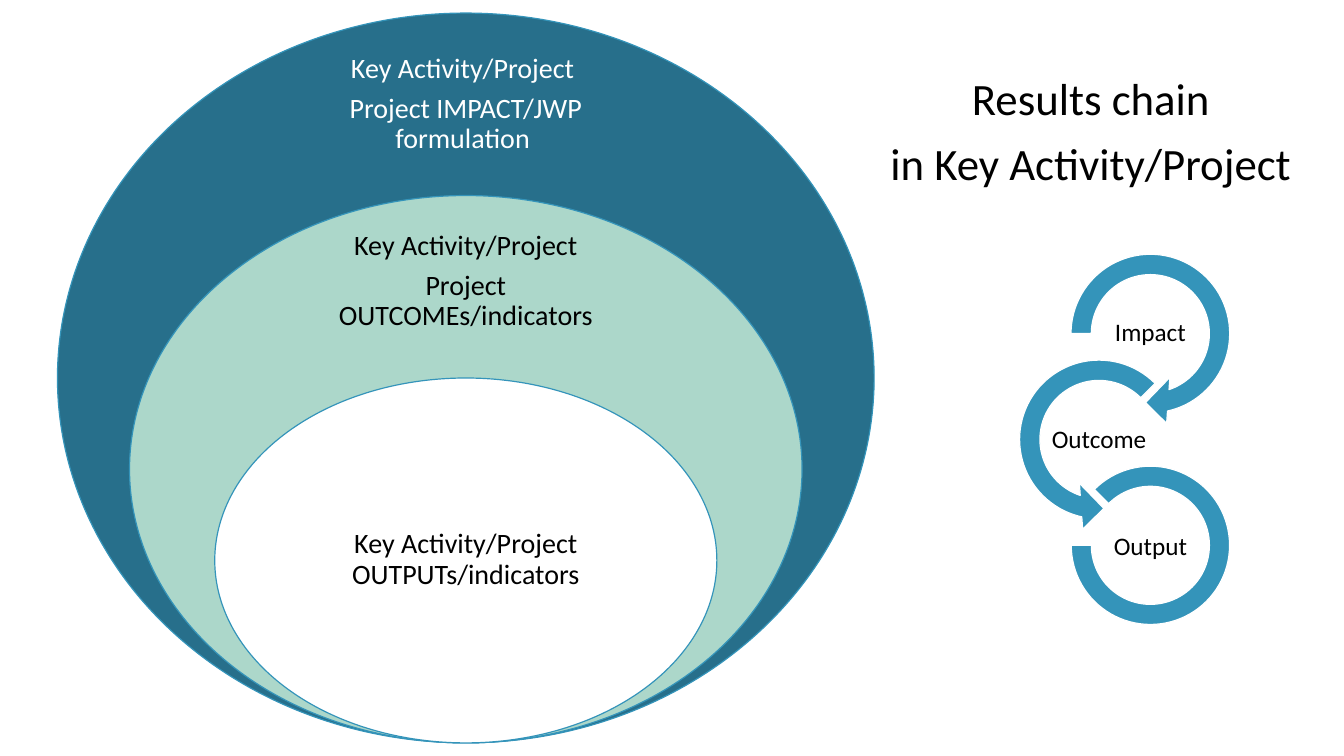
"""Build the results chain slide with nested ellipses and a chain of arrows."""
import dataclasses
import typing

import pptx
import pptx.dml.color
import pptx.enum.shapes
import pptx.enum.text
import pptx.shapes.autoshape
import pptx.shapes.shapetree
import pptx.util

SHAPE = pptx.enum.shapes.MSO_SHAPE
ANCHOR = pptx.enum.text.MSO_ANCHOR
ShapeTree = typing.Union[pptx.shapes.shapetree.SlideShapes, pptx.shapes.shapetree.GroupShapes]

COLUMNS, ROWS = 13.33, 7.5
CELL = pptx.util.Inches(1)


@dataclasses.dataclass(frozen=True)
class Theme:
    font: str = "Calibri"
    accent: str = "3494BA"
    deep: str = "276F8B"
    pale: str = "ACD7CA"
    white: str = "FFFFFF"
    black: str = "000000"
    title_size: float = 32
    ellipse_size: float = 20
    chain_size: float = 18
    outline: float = 0.85


THEME = Theme()


@dataclasses.dataclass(frozen=True)
class Box:
    left: float
    top: float
    width: float
    height: float

    def lengths(self) -> list[int]:
        return [round(cells * CELL) for cells in (self.left, self.top, self.width, self.height)]


@dataclasses.dataclass(frozen=True)
class Ellipse:
    width: float
    fill: str
    text_color: str
    label_top: float
    label_width: float
    label_height: float
    lines: tuple[str, ...]


@dataclasses.dataclass(frozen=True)
class ChainLink:
    label: str
    preset: SHAPE
    center: float
    size: float
    adjustments: tuple[float, ...]


ELLIPSES = (
    Ellipse(8.1, THEME.deep, THEME.white, 0.49, 2.83, 1.09,
            ("Key Activity/Project ", "Project IMPACT/JWP formulation ")),
    Ellipse(6.67, THEME.pale, THEME.black, 2.28, 3.11, 1.02,
            ("Key Activity/Project", "Project OUTCOMEs/indicators")),
    Ellipse(4.98, THEME.white, THEME.black, 4.65, 3.52, 1.81,
            ("Key Activity/Project OUTPUTs/indicators",)),
)
ELLIPSE_CENTER, ELLIPSE_TOP, ELLIPSE_BOTTOM, ELLIPSE_STEP = 4.62, 0.13, 7.37, 1.81

CHAIN = (
    ChainLink("Impact", SHAPE.CIRCULAR_ARROW, 11.41, 1.83, (0.11, 11.42, 45, 108, 0.125)),
    ChainLink("Outcome", SHAPE.LEFT_CIRCULAR_ARROW, 10.9, 1.83, (0.11, 11.42, 63, 189, 0.125)),
    ChainLink("Output", SHAPE.BLOCK_ARC, 11.41, 1.57, (135, 108, 0.127)),
)
CHAIN_TOP, CHAIN_STEP = 3.31, 1.05
LABEL_STEP, LABEL_WIDTH, LABEL_HEIGHT = 1.06, 1.02, 0.51


def color(value: str) -> pptx.dml.color.RGBColor:
    return pptx.dml.color.RGBColor.from_string(value)


def add_text(shapes: ShapeTree, box: Box, lines: typing.Sequence[str], *, size: float,
             text_color: str = THEME.black, anchor: ANCHOR = ANCHOR.MIDDLE,
             inset: typing.Optional[float] = None, before: float = 0, after: float = 0) -> None:
    frame = shapes.add_textbox(*box.lengths()).text_frame
    frame.word_wrap = True
    frame.vertical_anchor = anchor
    if inset is not None:
        margin = round(inset * CELL)
        frame.margin_left = frame.margin_right = margin
        frame.margin_top = frame.margin_bottom = margin
    for index, line in enumerate(lines):
        paragraph = frame.add_paragraph() if index else frame.paragraphs[0]
        paragraph.alignment = pptx.enum.text.PP_ALIGN.CENTER
        paragraph.line_spacing = 0.9
        paragraph.space_before = pptx.util.Pt(before)
        paragraph.space_after = pptx.util.Pt(after)
        run = paragraph.add_run()
        run.text = line
        run.font.name = THEME.font
        run.font.size = pptx.util.Pt(size)
        run.font.color.rgb = color(text_color)


def add_preset(shapes: ShapeTree, preset: SHAPE, box: Box, fill: str,
               line: str) -> pptx.shapes.autoshape.Shape:
    shape = shapes.add_shape(preset, *box.lengths())
    shape.shadow.inherit = False
    shape.fill.solid()
    shape.fill.fore_color.rgb = color(fill)
    shape.line.color.rgb = color(line)
    shape.line.width = pptx.util.Pt(THEME.outline)
    return shape


def draw_ellipses(shapes: ShapeTree) -> None:
    for index, ellipse in enumerate(ELLIPSES):
        top = ELLIPSE_TOP + index * ELLIPSE_STEP
        box = Box(ELLIPSE_CENTER - ellipse.width / 2, top, ellipse.width, ELLIPSE_BOTTOM - top)
        add_preset(shapes, SHAPE.OVAL, box, ellipse.fill, THEME.accent)
        label = Box(ELLIPSE_CENTER - ellipse.label_width / 2, ellipse.label_top,
                    ellipse.label_width, ellipse.label_height)
        add_text(shapes, label, ellipse.lines, size=THEME.ellipse_size,
                 text_color=ellipse.text_color, inset=0.16, after=7)


def draw_chain(shapes: ShapeTree) -> None:
    for index, link in enumerate(CHAIN):
        middle = CHAIN_TOP + index * CHAIN_STEP
        box = Box(link.center - link.size / 2, middle - link.size / 2, link.size, link.size)
        shape = add_preset(shapes, link.preset, box, THEME.accent, THEME.white)
        for position, value in enumerate(link.adjustments):
            shape.adjustments[position] = value
        label = Box(link.center - LABEL_WIDTH / 2,
                    CHAIN_TOP + index * LABEL_STEP - LABEL_HEIGHT / 2, LABEL_WIDTH, LABEL_HEIGHT)
        add_text(shapes, label, (link.label,), size=THEME.chain_size, inset=0.01, after=6)


def main() -> None:
    presentation = pptx.Presentation()
    presentation.slide_width = round(COLUMNS * CELL)
    presentation.slide_height = round(ROWS * CELL)
    slide = presentation.slides.add_slide(presentation.slide_layouts[6])
    draw_ellipses(slide.shapes.add_group_shape().shapes)
    add_text(slide.shapes, Box(8.55, 0.71, 4.54, 1.85),
             ("Results chain", "in Key Activity/Project"),
             size=THEME.title_size, anchor=ANCHOR.TOP, before=12)
    draw_chain(slide.shapes.add_group_shape().shapes)
    presentation.save("out.pptx")


if __name__ == "__main__":
    main()
